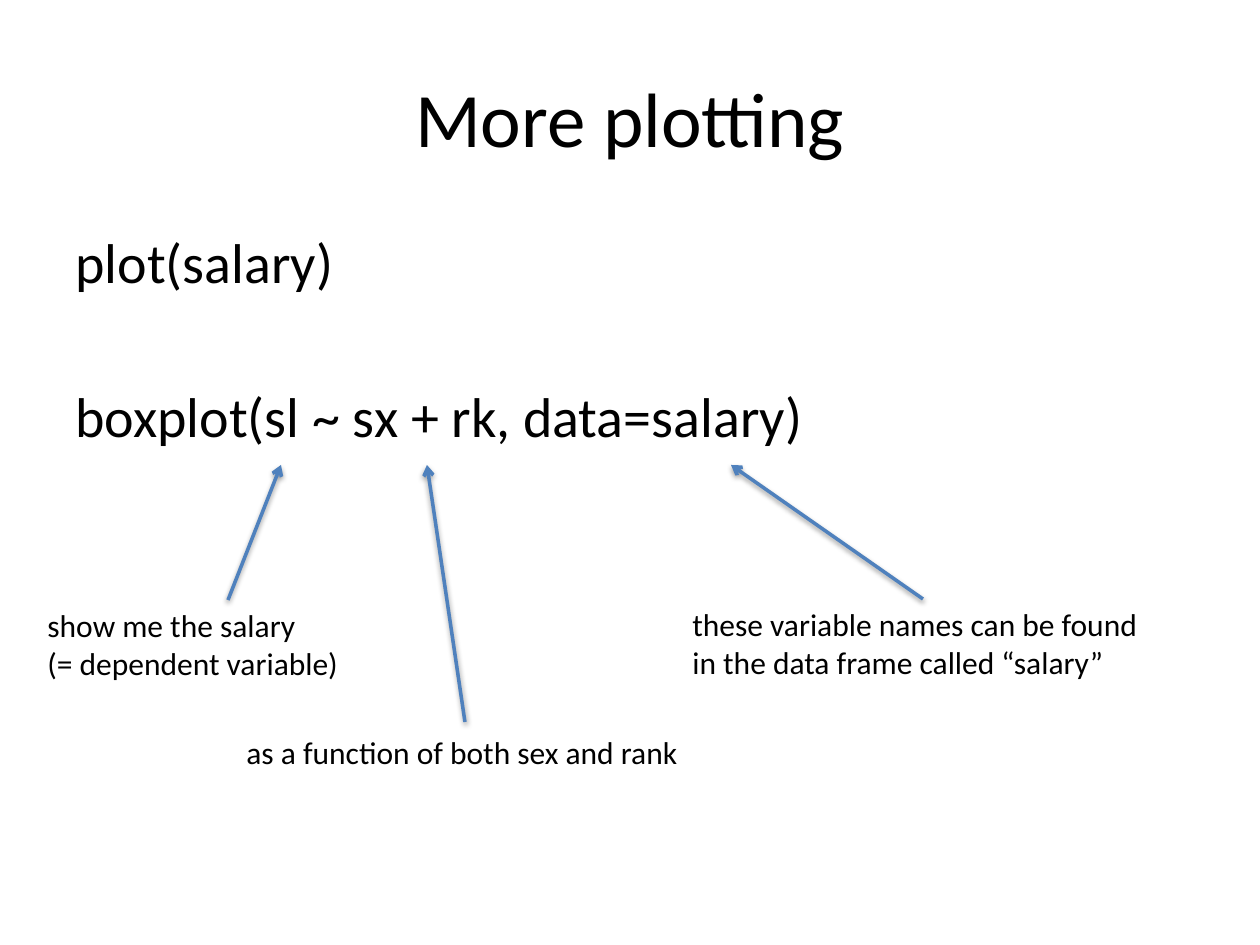
from dataclasses import dataclass
from typing import Optional

from lxml import etree
from pptx import Presentation
from pptx.dml.color import RGBColor
from pptx.enum.shapes import MSO_CONNECTOR
from pptx.enum.text import MSO_ANCHOR, PP_ALIGN
from pptx.oxml import parse_xml
from pptx.oxml.ns import nsdecls, qn
from pptx.shapes.autoshape import Shape
from pptx.slide import Slide
from pptx.util import Emu, Pt

STRAIGHT = MSO_CONNECTOR.STRAIGHT
LEFT, CENTER = PP_ALIGN.LEFT, PP_ALIGN.CENTER
TOP, MIDDLE = MSO_ANCHOR.TOP, MSO_ANCHOR.MIDDLE
TOP_SIDE = 0
EMU_PER_PX = 914400 / 126


@dataclass(frozen=True)
class Theme:
    font: str = "Calibri"
    ink: RGBColor = RGBColor(0x00, 0x00, 0x00)
    arrow: RGBColor = RGBColor(0x4F, 0x81, 0xBD)
    title_size: int = 44
    code_size: int = 32
    note_size: int = 18
    arrow_width: int = 2
    code_gap: float = 49.5


THEME = Theme()


@dataclass(frozen=True)
class Box:
    left: int
    top: int
    width: int
    height: int


@dataclass(frozen=True)
class Note:
    lines: tuple[str, ...]
    box: Box
    start: tuple[int, int]
    target: tuple[int, int]
    wrap: bool = False
    joined: bool = False


NOTES = (
    Note(("show me the salary", "(= dependent variable)"),
         Box(35, 600, 320, 89), start=(228, 600), target=(281, 465)),
    Note(("as a function of both sex and rank",),
         Box(234, 727, 462, 51), start=(465, 722), target=(427, 465)),
    Note(("these variable names can be found in the data frame called “salary”",),
         Box(680, 599, 486, 89), start=(923, 599), target=(731, 465),
         wrap=True, joined=True),
)


def px(length: int) -> Emu:
    return Emu(round(length * EMU_PER_PX))


def add_text(slide: Slide, lines: tuple[str, ...], box: Box, *, size: int,
             align: PP_ALIGN = LEFT, anchor: MSO_ANCHOR = TOP,
             wrap: bool = True, gap: float = 0) -> Shape:
    textbox = slide.shapes.add_textbox(
        px(box.left), px(box.top), px(box.width), px(box.height))
    frame = textbox.text_frame
    frame.word_wrap = wrap
    frame.vertical_anchor = anchor
    for index, line in enumerate(lines):
        paragraph = frame.add_paragraph() if index else frame.paragraphs[0]
        paragraph.alignment = align
        paragraph.space_before = Pt(gap if index else 0)
        run = paragraph.add_run()
        run.text = line
        run.font.name = THEME.font
        run.font.size = Pt(size)
        run.font.color.rgb = THEME.ink
    return textbox


def add_arrow(slide: Slide, note: Note, label: Shape) -> None:
    arrow = slide.shapes.add_connector(
        STRAIGHT, *map(px, note.start), *map(px, note.target))
    if note.joined:
        arrow.begin_connect(label, TOP_SIDE)
    arrow.line.color.rgb = THEME.arrow
    arrow.line.width = Pt(THEME.arrow_width)
    etree.SubElement(arrow.line._get_or_add_ln(), qn("a:tailEnd"), type="arrow")
    arrow._element.spPr.append(parse_xml(
        f'<a:effectLst {nsdecls("a")}>'
        f'<a:outerShdw blurRad="{Pt(3.1)}" dist="{Pt(1.6)}" dir="5400000" rotWithShape="0">'
        '<a:srgbClr val="000000"><a:alpha val="38000"/></a:srgbClr>'
        '</a:outerShdw></a:effectLst>'))


def main() -> None:
    deck = Presentation()
    deck.slide_width, deck.slide_height = px(1260), px(945)
    slide = deck.slides.add_slide(deck.slide_layouts[6])
    add_text(slide, ("More plotting",), Box(63, 38, 1134, 157),
             size=THEME.title_size, align=CENTER, anchor=MIDDLE)
    add_text(slide, ("plot(salary)", "boxplot(sl ~ sx + rk, data=salary)"),
             Box(63, 221, 1134, 624), size=THEME.code_size, gap=THEME.code_gap)
    for note in NOTES:
        label = add_text(slide, note.lines, note.box,
                         size=THEME.note_size, wrap=note.wrap)
        add_arrow(slide, note, label)
    deck.save("out.pptx")


if __name__ == "__main__":
    main()
